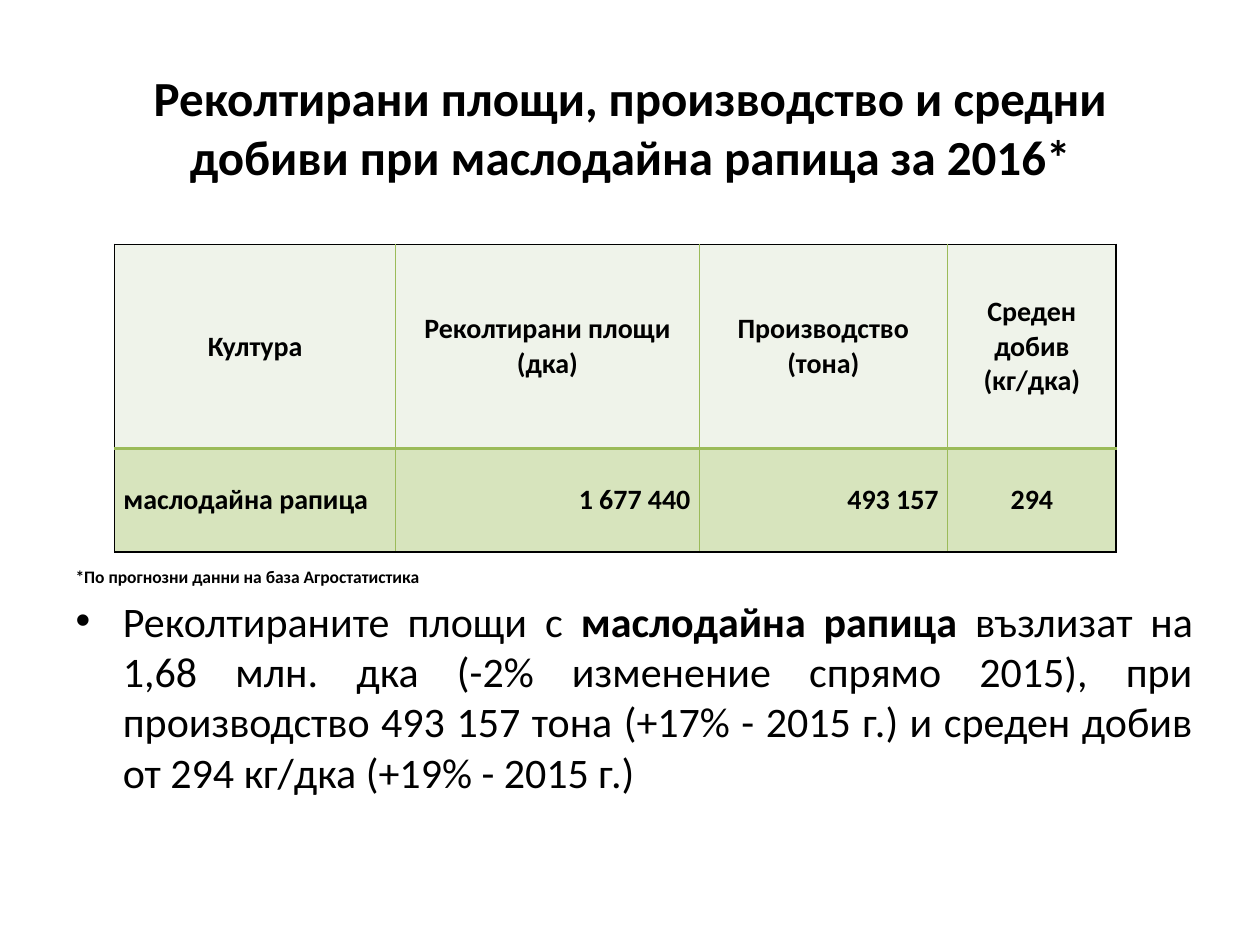
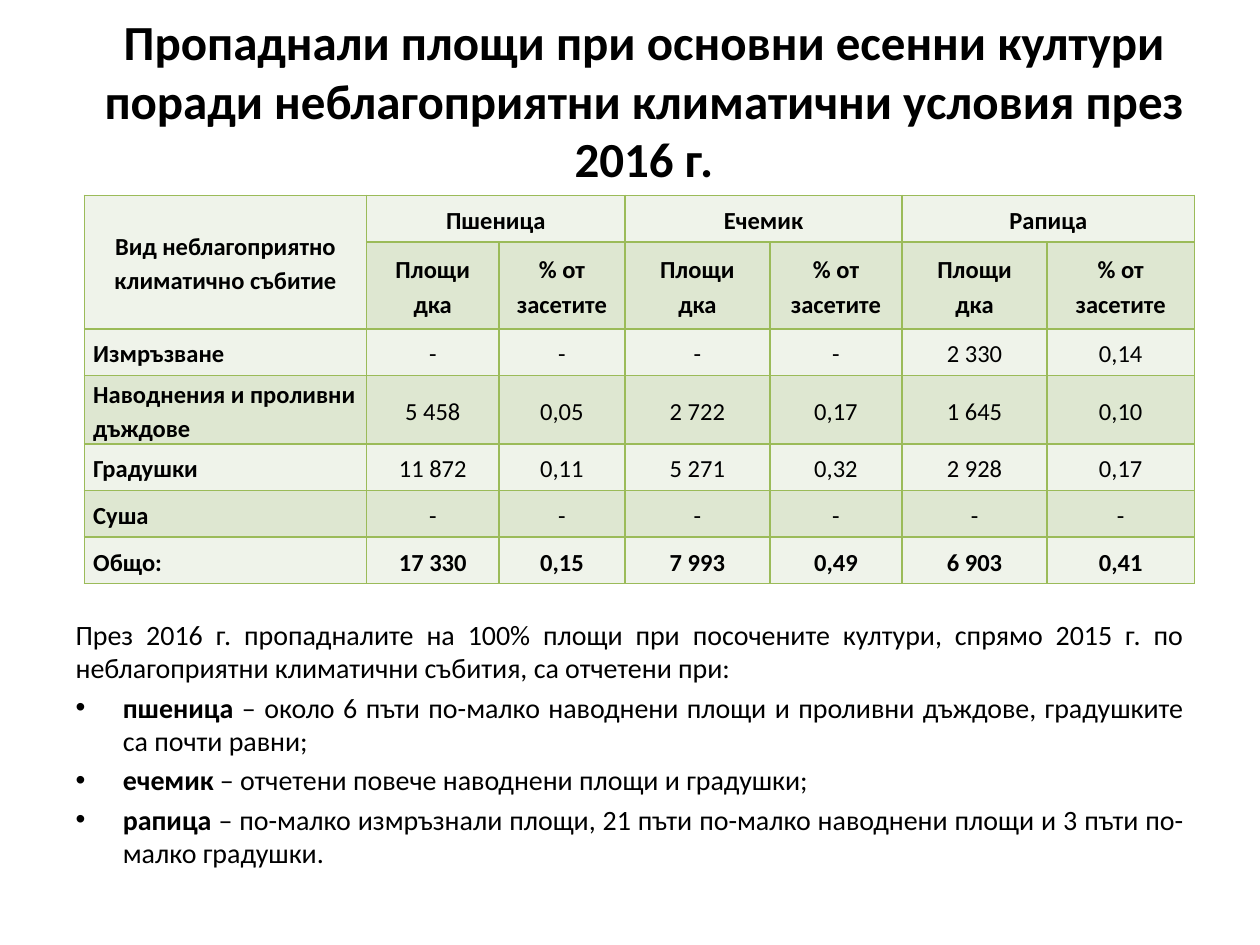
from lxml import etree
from pptx import Presentation
from pptx.dml.color import RGBColor
from pptx.enum import text
from pptx.oxml import ns
from pptx.util import Inches, Pt

COLORS = {
    "ink": "000000",
    "green": "9BBB59",
    "pale": "EFF3EA",
    "band": "DEE7D1",
    "leaf": "D7E4BD",
}
FONT = "Calibri"
LEFT, CENTER, RIGHT, JUSTIFY = (
    text.PP_ALIGN.LEFT, text.PP_ALIGN.CENTER, text.PP_ALIGN.RIGHT, text.PP_ALIGN.JUSTIFY)
SIDES = {"left": "a:lnL", "right": "a:lnR", "top": "a:lnT", "bottom": "a:lnB"}


# Shared formatting
def apply(target, values):
    for name, value in values.items():
        setattr(target, name, value)


def place(shape, left, top, width, height):
    apply(shape, {"left": Inches(left), "top": Inches(top),
                  "width": Inches(width), "height": Inches(height)})


def write(para, spans, size, align, spacing=None):
    """Fill a paragraph with (words, bold) spans."""
    apply(para, {"alignment": align, "line_spacing": spacing})
    for words, bold in spans:
        span = para.add_run()
        span.text = words
        apply(span.font, {"name": FONT, "size": Pt(size), "bold": bold})
        span.font.color.rgb = RGBColor.from_string(COLORS["ink"])


# Placeholders
def add_title(page, words, box, bottom_inset=0.05):
    title = page.shapes.title
    place(title, *box)
    frame = title.text_frame
    apply(frame, {"auto_size": text.MSO_AUTO_SIZE.NONE, "word_wrap": True,
                  "vertical_anchor": text.MSO_ANCHOR.MIDDLE,
                  "margin_bottom": Inches(bottom_inset)})
    write(frame.paragraphs[0], [(words, True)], 28, CENTER)


def remove_bullet(para):
    props = para._p.get_or_add_pPr()
    props.set("marL", "0")
    props.set("indent", "0")
    etree.SubElement(props, ns.qn("a:buNone"))


def add_body(page, box, lead, bullets, size, top_inset=0.05):
    """Write an unbulleted lead (words, bold, size), then the bullets."""
    body = page.placeholders[1]
    place(body, *box)
    frame = body.text_frame
    apply(frame, {"auto_size": text.MSO_AUTO_SIZE.NONE, "word_wrap": True,
                  "margin_top": Inches(top_inset)})
    words, bold, lead_size = lead
    first = frame.paragraphs[0]
    write(first, [(words, bold)], lead_size, JUSTIFY)
    remove_bullet(first)
    for spans in bullets:
        write(frame.add_paragraph(), spans, size, JUSTIFY)


# Tables
def add_grid(page, left, top, columns, rows):
    box = page.shapes.add_table(len(rows), len(columns), Inches(left), Inches(top),
                                Inches(sum(columns)), Inches(sum(rows)))
    table = box.table
    apply(table, {"first_row": False, "horz_banding": False})
    for column, width in zip(table.columns, columns):
        column.width = Inches(width)
    for row, height in zip(table.rows, rows):
        row.height = Inches(height)
    return table


def set_borders(cell, borders):
    """Draw each side as (colour name, points)."""
    props = cell._tc.get_or_add_tcPr()
    for side, tag in SIDES.items():
        color, width = borders[side]
        line = etree.SubElement(props, ns.qn(tag), w=str(Pt(width)))
        fill = etree.SubElement(line, ns.qn("a:solidFill"))
        etree.SubElement(fill, ns.qn("a:srgbClr"), val=COLORS[color])


def fill_cell(cell, words, fill, borders, size, align, bold=True, spacing=None):
    set_borders(cell, borders)
    cell.fill.solid()
    cell.fill.fore_color.rgb = RGBColor.from_string(COLORS[fill])
    apply(cell, {"vertical_anchor": text.MSO_ANCHOR.MIDDLE,
                 "margin_left": Inches(0.07), "margin_right": Inches(0.07),
                 "margin_top": 0, "margin_bottom": 0})
    frame = cell.text_frame
    for index, line in enumerate(words.split("\n") if words else []):
        para = frame.add_paragraph() if index else frame.paragraphs[0]
        write(para, [(line, bold)], size, align, spacing)


def add_harvest_table(page):
    columns = [2.23, 2.41, 1.97, 1.34]
    content = [
        ["Култура", "Реколтирани площи\n(дка)", "Производство\n(тона)", "Среден добив\n(кг/дка)"],
        ["маслодайна рапица", "1 677 440", "493 157", "294"],
    ]
    aligns = [[CENTER] * 4, [LEFT, RIGHT, RIGHT, CENTER]]
    table = add_grid(page, 0.91, 1.94, columns, [1.62, 0.82])
    last = len(columns) - 1
    for r, line in enumerate(content):
        for c, words in enumerate(line):
            borders = {
                "left": ("green" if c else "ink", 1),
                "right": ("ink" if c == last else "green", 1),
                "top": ("green", 2) if r else ("ink", 1),
                "bottom": ("ink", 1) if r else ("green", 2),
            }
            fill_cell(table.cell(r, c), words, "leaf" if r else "pale",
                      borders, 16, aligns[r][c])


def add_loss_table(page):
    crops = ["Пшеница", "Ечемик", "Рапица"]
    content = [
        ["Вид неблагоприятно климатично събитие"] + [w for crop in crops for w in (crop, "")],
        [""] + ["Площи\nдка", "% от засетите"] * len(crops),
        ["Измръзване", "-", "-", "-", "-", "2 330", "0,14"],
        ["Наводнения и проливни дъждове", "5 458", "0,05", "2 722", "0,17", "1 645", "0,10"],
        ["Градушки", "11 872", "0,11", "5 271", "0,32", "2 928", "0,17"],
        ["Суша"] + ["-"] * 6,
        ["Общо:", "17 330", "0,15", "7 993", "0,49", "6 903", "0,41"],
    ]
    table = add_grid(page, 0.67, 1.55, [2.24, 1.05, 1, 1.15, 1.05, 1.15, 1.17],
                     [0.37, 0.69, 0.37, 0.53, 0.37, 0.37, 0.37])
    borders = dict.fromkeys(SIDES, ("green", 1))
    last = len(content) - 1
    for r, line in enumerate(content):
        for c, words in enumerate(line):
            fill_cell(table.cell(r, c), words, "band" if r % 2 else "pale", borders, 14,
                      LEFT if c == 0 and r > 1 else CENTER,
                      bold=c == 0 or r < 2 or r == last, spacing=1.15)
    # Header spans
    table.cell(0, 0).merge(table.cell(1, 0))
    for c in range(1, 7, 2):
        table.cell(0, c).merge(table.cell(0, c + 1))


# Slides
def build_harvest_page(deck):
    page = deck.slides.add_slide(deck.slide_layouts[1])
    add_title(page, "Реколтирани площи, производство и средни добиви при маслодайна "
                    "рапица за 2016*", (0.5, 0.3, 9, 1.4))
    add_body(page, (0.5, 2.02, 9.07, 4.88),
             ("*По прогнозни данни на база Агростатистика", True, 10),
             [[("Реколтираните площи с ", False), ("маслодайна рапица", True),
               (" възлизат на 1,68 млн. дка (-2% изменение спрямо 2015), при производство "
                "493 157 тона (+17% - 2015 г.) и среден добив от 294 кг/дка "
                "(+19% - 2015 г.)", False)]],
             24, top_inset=2.47)
    add_harvest_table(page)


def build_loss_page(deck):
    page = deck.slides.add_slide(deck.slide_layouts[1])
    add_title(page, "Пропаднали площи при основни есенни култури поради неблагоприятни "
                    "климатични условия през 2016 г.", (0.5, 0.44, 9.22, 1.11),
              bottom_inset=0.46)
    add_body(page, (0.5, 4.85, 9, 2.52),
             ("През 2016 г. пропадналите на 100% площи при посочените култури, спрямо 2015 г. "
              "по неблагоприятни климатични събития, са отчетени при:", False, 16),
             [[("пшеница ", True),
               ("– около 6 пъти по-малко наводнени площи и проливни дъждове, градушките "
                "са почти равни;", False)],
              [("ечемик", True), (" – отчетени повече наводнени площи и градушки;", False)],
              [("рапица", True),
               (" – по-малко измръзнали площи, 21 пъти по-малко наводнени площи и 3 пъти "
                "по-малко градушки.", False)]],
             16)
    add_loss_table(page)


def main():
    deck = Presentation()
    apply(deck, {"slide_width": Inches(10), "slide_height": Inches(7.5)})
    build_harvest_page(deck)
    build_loss_page(deck)
    deck.save("out.pptx")


if __name__ == "__main__":
    main()
